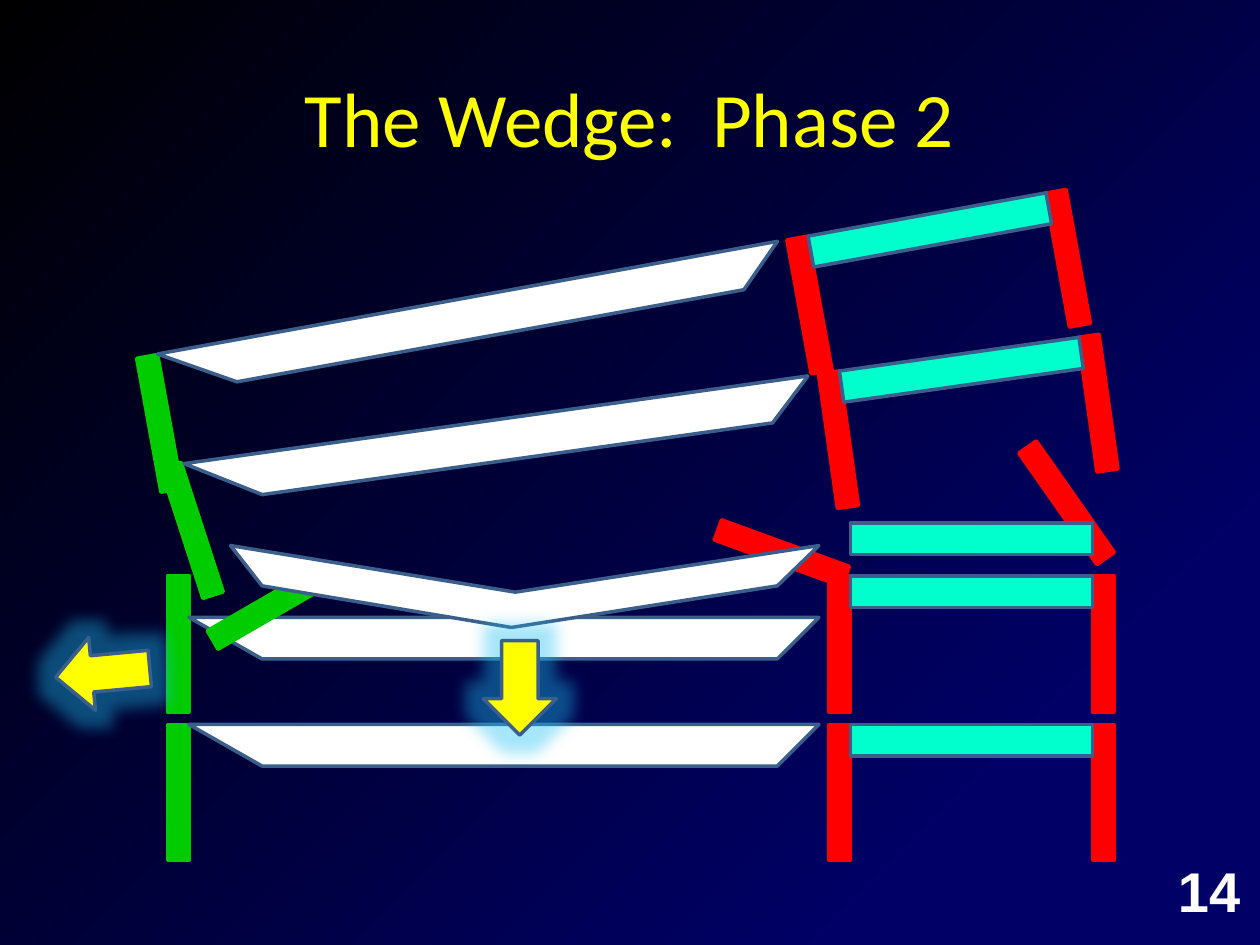
from lxml import etree
from pptx import Presentation
from pptx.dml.color import RGBColor
from pptx.enum.shapes import MSO_SHAPE
from pptx.enum.text import MSO_ANCHOR, PP_ALIGN
from pptx.oxml.ns import qn
from pptx.util import Inches, Pt

RECT, ARROW = MSO_SHAPE.RECTANGLE, MSO_SHAPE.RIGHT_ARROW
LEFT, CENTER = PP_ALIGN.LEFT, PP_ALIGN.CENTER
TOP, MIDDLE = MSO_ANCHOR.TOP, MSO_ANCHOR.MIDDLE

BLACK = RGBColor(0x00, 0x00, 0x00)
NAVY = RGBColor(0x00, 0x00, 0x66)
GREEN = RGBColor(0x00, 0xCC, 0x00)
RED = RGBColor(0xFF, 0x00, 0x00)
AQUA = RGBColor(0x00, 0xFF, 0xCC)
WHITE = RGBColor(0xFF, 0xFF, 0xFF)
YELLOW = RGBColor(0xFF, 0xFF, 0x00)
EDGE = RGBColor(0x3A, 0x5F, 0x8C)
GLOW = RGBColor(0x1F, 0xC1, 0xF3)

POST = (0.17, 1.08)
BAR = (1.92, 0.25)
HEAD = (0.75, 0.58)
BEAM = [(0, 0), (0.58, 0.33), (4.67, 0.33), (5, 0)]
BENT = [(0, 0), (0.25, 0.32), (2.23, 0.65), (4.34, 0.32), (4.67, 0), (2.26, 0.37)]

# Levels from back to front: posts are green, red, red as (x, y, turn),
# then the bar, and the beam with its outline
LEVELS = [
    ([(1.33, 4.57, 0), (6.58, 4.57, 0), (8.67, 4.57, 0)],
     (6.75, 4.57, 0), (1.5, 4.9, 0), BEAM),
    ([(2.07, 4.27, 60), (6.12, 3.85, 290), (8.38, 3.45, 325)],
     (6.75, 4.15, 0), (1.83, 4.33, 0), BENT),
    ([(1.44, 3.67, 342), (6.57, 2.95, 352), (8.63, 2.66, 352)],
     (6.67, 2.81, 352), (1.46, 3.33, 352), BEAM),
    ([(1.18, 2.82, 349.7), (6.34, 1.88, 349.7), (8.39, 1.51, 349.7)],
     (6.42, 1.7, 349.7), (1.24, 2.36, 349.7), BEAM),
    ([(1.33, 5.75, 0), (6.58, 5.75, 0), (8.67, 5.75, 0)],
     (6.75, 5.75, 0), (1.5, 5.75, 0), BEAM),
]


def paint(shape, fill, line, turn):
    shape.shadow.inherit = False
    shape.fill.solid()
    shape.fill.fore_color.rgb = fill
    shape.line.color.rgb = line
    shape.line.width = Pt(2)
    shape.rotation = turn


def add_box(slide, place, size, fill, line=EDGE, kind=RECT):
    x, y, turn = place
    box = slide.shapes.add_shape(kind, *map(Inches, (x, y, *size)))
    paint(box, fill, line, turn)
    return box


def add_beam(slide, place, outline):
    x, y, turn = place
    points = [(Inches(x + dx), Inches(y + dy)) for dx, dy in outline]
    pen = slide.shapes.build_freeform(*points[0])
    pen.add_line_segments(points[1:], close=True)
    paint(pen.convert_to_shape(), WHITE, EDGE, turn)


def add_level(slide, posts, bar, beam, outline):
    for place, color in zip(posts, (GREEN, RED, RED)):
        add_box(slide, place, POST, color, color)
    add_box(slide, bar, BAR, AQUA)
    add_beam(slide, beam, outline)


def add_arrow(slide, place):
    arrow = add_box(slide, place, HEAD, YELLOW, kind=ARROW)
    # Soft halo
    effects = arrow.element.spPr.find(qn("a:effectLst"))
    glow = etree.SubElement(effects, qn("a:glow"), rad=str(Inches(0.25)))
    color = etree.SubElement(glow, qn("a:srgbClr"), val=str(GLOW))
    etree.SubElement(color, qn("a:alpha"), val="40000")


def add_text(slide, text, place, size, font, color,
             bold=False, align=LEFT, anchor=TOP):
    frame = slide.shapes.add_textbox(*map(Inches, place)).text_frame
    frame.word_wrap = True
    frame.vertical_anchor = anchor
    line = frame.paragraphs[0]
    line.alignment = align
    run = line.add_run()
    run.text = text
    run.font.size = Pt(size)
    run.font.name = font
    run.font.bold = bold
    run.font.color.rgb = color


def set_ground(slide):
    fill = slide.background.fill
    fill.gradient()
    fill.gradient_angle = 315
    for stop, at, color in zip(fill.gradient_stops, (0, 0.81), (BLACK, NAVY)):
        stop.position = at
        stop.color.rgb = color


def main():
    deck = Presentation()
    deck.slide_width, deck.slide_height = Inches(10), Inches(7.5)
    slide = deck.slides.add_slide(deck.slide_layouts[6])
    set_ground(slide)

    # Title
    add_text(slide, "The Wedge:  Phase 2", (0.5, 0.3, 9, 1.25), 44, "Calibri",
             YELLOW, align=CENTER, anchor=MIDDLE)

    # Levels of the frame
    for level in LEVELS:
        add_level(slide, *level)

    # Directions of movement
    add_arrow(slide, (3.75, 5.17, 90))
    add_arrow(slide, (0.44, 5.05, 174.7))

    # Slide number
    add_text(slide, "14", (9.25, 6.75, 0.92, 0.64), 32, "Arial", WHITE, bold=True)

    deck.save("out.pptx")


if __name__ == "__main__":
    main()
